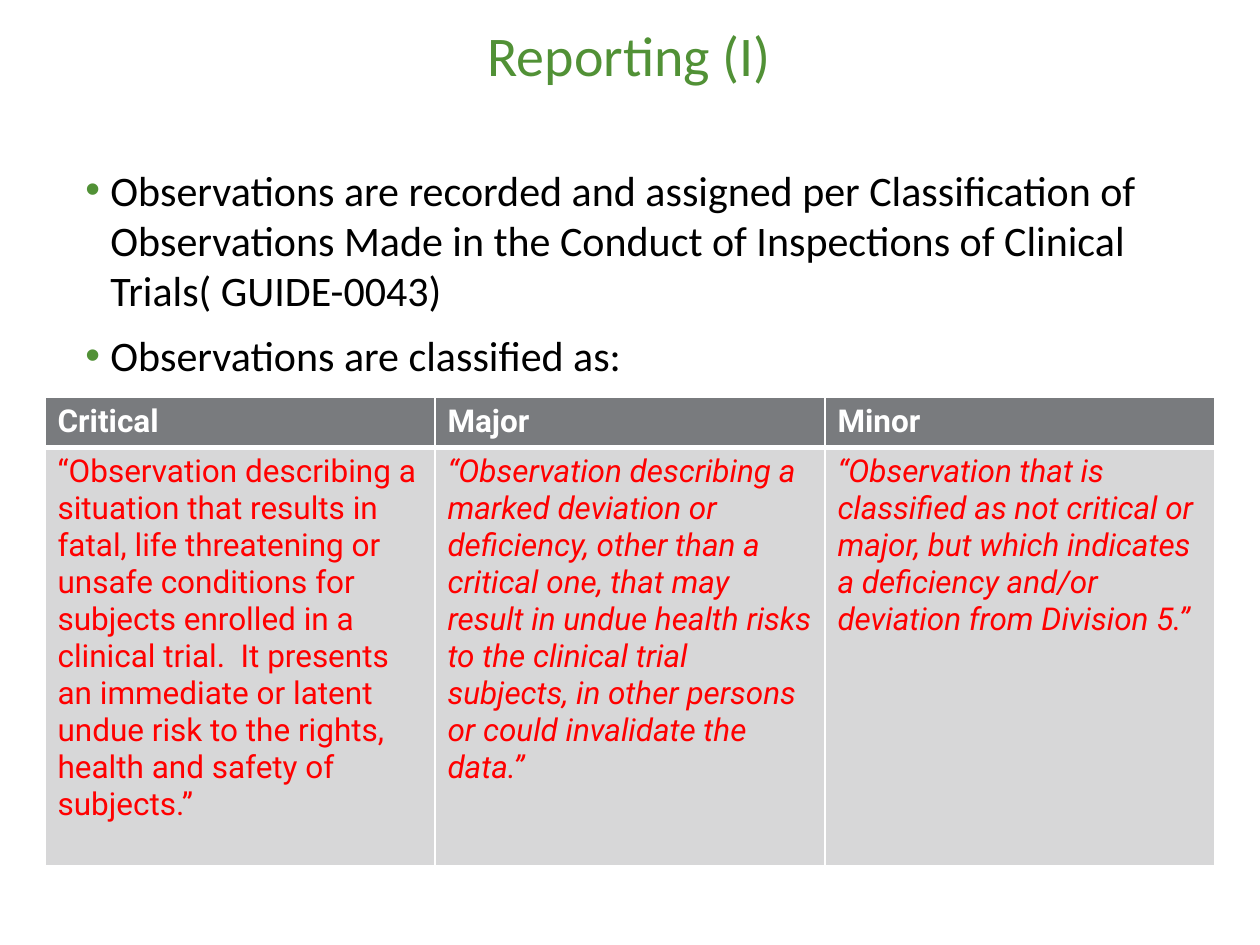
"""Build the Reporting (I) slide: title, two bullets and a classification table."""
import pptx
import pptx.dml.color
import pptx.enum.text
import pptx.oxml
import pptx.oxml.ns
import pptx.util

PX = 914400 // 126
THEME = {
    "green": "519136", "black": "000000", "white": "FFFFFF", "red": "FF0000",
    "header": "797B7E", "body": "D7D7D8",
    "text_font": "Calibri", "table_font": "Roboto",
    "title_size": 32, "bullet_size": 24, "table_size": 18,
}
TITLE = "Reporting (I)"
BULLETS = [
    "Observations are recorded and assigned per Classification of Observations Made in the Conduct of Inspections of Clinical Trials( GUIDE-0043)",
    "Observations are classified as:",
]
CLASSES = [
    ("Critical", "“Observation describing a situation that results in fatal, life threatening or unsafe conditions for subjects enrolled in a clinical trial.  It presents an immediate or latent undue risk to the rights, health and safety of subjects.”", False),
    ("Major", "“Observation describing a marked deviation or deficiency, other than a critical one, that may result in undue health risks to the clinical trial subjects, in other persons or could invalidate the data.”", True),
    ("Minor", "“Observation that is classified as not critical or major, but which indicates a deficiency and/or deviation from Division 5.”", True),
]
TITLE_BOX = (44, 16, 1171, 76)
BULLET_BOX = (73, 158, 1103, 230)
TABLE_BOX = (45, 397, 1170, 467)
ROW_HEIGHTS = (49, 418)
INDENT = 25


def px(n):
    return pptx.util.Emu(n * PX)


def rgb(name):
    return pptx.dml.color.RGBColor.from_string(THEME[name])


def add_xml(parent, xml):
    ns = pptx.oxml.ns.nsdecls("a")
    parent.append(pptx.oxml.parse_xml(xml.replace(" NS", " " + ns, 1)))


def write(p, text, color, **fmt):
    r = p.add_run()
    r.text = text
    for key, value in fmt.items():
        setattr(r.font, key, value)
    r.font.color.rgb = rgb(color)


def add_text_box(s, box, anchor):
    tf = s.shapes.add_textbox(*map(px, box)).text_frame
    tf.word_wrap = True
    tf.vertical_anchor = anchor
    return tf


def add_title(s):
    tf = add_text_box(s, TITLE_BOX, pptx.enum.text.MSO_ANCHOR.MIDDLE)
    p = tf.paragraphs[0]
    p.alignment = pptx.enum.text.PP_ALIGN.CENTER
    write(p, TITLE, "green", name=THEME["text_font"], size=pptx.util.Pt(THEME["title_size"]))


def add_bullets(s):
    tf = add_text_box(s, BULLET_BOX, pptx.enum.text.MSO_ANCHOR.TOP)
    for i, text in enumerate(BULLETS):
        p = tf.add_paragraph() if i else tf.paragraphs[0]
        pPr = p._p.get_or_add_pPr()
        pPr.set("marL", str(px(INDENT)))
        pPr.set("indent", str(-px(INDENT)))
        add_xml(pPr, f'<a:buClr NS><a:srgbClr val="{THEME["green"]}"/></a:buClr>')
        add_xml(pPr, '<a:buFont NS typeface="Arial"/>')
        add_xml(pPr, '<a:buChar NS char="•"/>')
        if i:
            p.space_before = pptx.util.Pt(8)
        write(p, text, "black", name=THEME["text_font"], size=pptx.util.Pt(THEME["bullet_size"]))


def fill_cell(cell, text, color, fill, borders, **fmt):
    write(cell.text_frame.paragraphs[0], text, color, name=THEME["table_font"],
          size=pptx.util.Pt(THEME["table_size"]), **fmt)
    tcPr = cell._tc.get_or_add_tcPr()
    for side, width in borders.items():
        add_xml(tcPr, f'<a:ln{side} NS w="{pptx.util.Pt(width)}"><a:solidFill>'
                      f'<a:srgbClr val="{THEME["white"]}"/></a:solidFill></a:ln{side}>')
    cell.fill.solid()
    cell.fill.fore_color.rgb = rgb(fill)


def add_table(s):
    table = s.shapes.add_table(2, len(CLASSES), *map(px, TABLE_BOX)).table
    for row, height in zip(table.rows, ROW_HEIGHTS):
        row.height = px(height)
    head_borders = {"L": 1, "R": 1, "T": 1, "B": 3}
    body_borders = {"L": 1, "R": 1, "T": 3, "B": 1}
    for c, (name, definition, italic) in enumerate(CLASSES):
        table.columns[c].width = px(TABLE_BOX[2] // len(CLASSES))
        fill_cell(table.cell(0, c), name, "white", "header", head_borders, bold=True)
        fill_cell(table.cell(1, c), definition, "red", "body", body_borders,
                  bold=False, italic=italic)


def main():
    prs = pptx.Presentation()
    prs.slide_width, prs.slide_height = px(1260), px(945)
    s = prs.slides.add_slide(prs.slide_layouts[6])
    add_title(s)
    add_bullets(s)
    add_table(s)
    prs.save("out.pptx")


if __name__ == "__main__":
    main()
